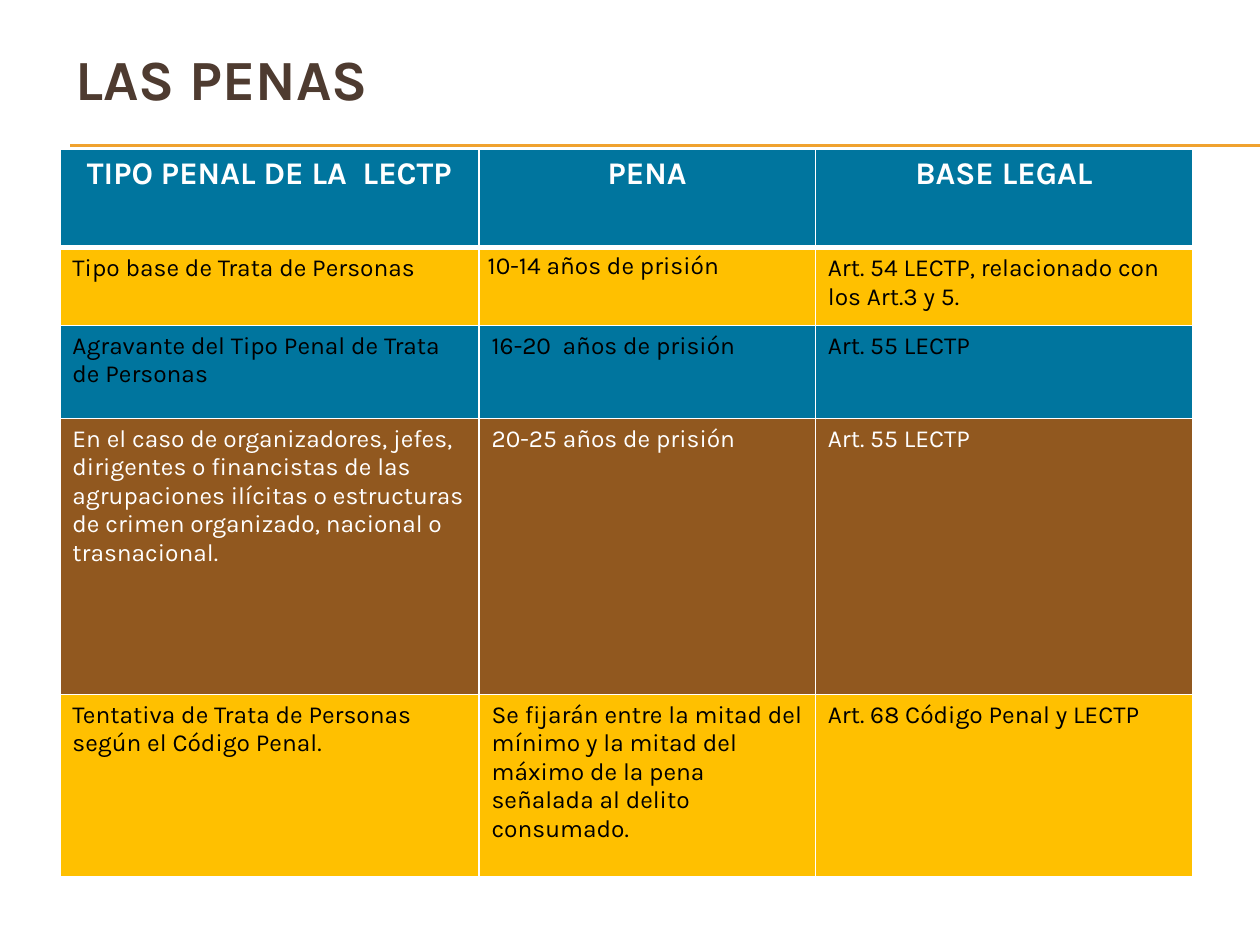
from lxml.etree import SubElement
from pptx import Presentation
from pptx.dml.color import RGBColor
from pptx.enum.shapes import MSO_CONNECTOR
from pptx.enum.text import MSO_ANCHOR, PP_ALIGN
from pptx.oxml.ns import qn
from pptx.util import Pt

WHITE = RGBColor(0xFF, 0xFF, 0xFF)
BLACK = RGBColor(0, 0, 0)
BROWN = RGBColor(0x4E, 0x3B, 0x30)
ORANGE = RGBColor(0xF0, 0xA2, 0x2E)
BLUE = RGBColor(0x00, 0x75, 0x9E)
YELLOW = RGBColor(0xFF, 0xC0, 0x00)
EARTH = RGBColor(0x91, 0x58, 0x1F)

HEADER = {"name": "Karla", "size": Pt(18), "bold": True}
BODY = {"name": "Karla", "size": Pt(14), "bold": False}
TITLE = {"name": "Karla", "size": Pt(32.4), "bold": True}


def set_font(font, values, color):
    for name, value in values.items():
        setattr(font, name, value)
    font.color.rgb = color


def add_border(cell, side, width):
    ln = SubElement(cell._tc.get_or_add_tcPr(), qn(f"a:{side}"), w=str(Pt(width)))
    fill = SubElement(ln, qn("a:solidFill"))
    SubElement(fill, qn("a:srgbClr"), val=str(WHITE))


prs = Presentation()
prs.slide_width, prs.slide_height = Pt(720), Pt(540)
s = prs.slides.add_slide(prs.slide_layouts[5])

for y in (82.8, 83.5):
    line = s.shapes.add_connector(MSO_CONNECTOR.STRAIGHT, Pt(40.3), Pt(y), Pt(720), Pt(y))
    line.line.color.rgb = ORANGE
    line.line.width = Pt(0.75)
    SubElement(line._element.spPr, qn("a:effectLst"))

title = s.shapes.title
title.left, title.top, title.width, title.height = Pt(36), Pt(21.6), Pt(648), Pt(46)
tf = title.text_frame
tf.text = "LAS PENAS"
tf.vertical_anchor = MSO_ANCHOR.MIDDLE
p = tf.paragraphs[0]
p.alignment = PP_ALIGN.LEFT
set_font(p.font, TITLE, BROWN)

rows = [
    (56.6, BLUE, WHITE, ["TIPO PENAL DE LA  LECTP", "PENA", "BASE LEGAL"]),
    (44.5, YELLOW, BLACK, [
        "Tipo base de Trata de Personas",
        "10-14 años de prisión",
        "Art. 54 LECTP, relacionado con los Art.3 y 5.",
    ]),
    (53, BLUE, BLACK, [
        "Agravante del Tipo Penal de Trata de Personas",
        "16-20  años de prisión",
        "Art. 55 LECTP",
    ]),
    (157.7, EARTH, WHITE, [
        "En el caso de organizadores, jefes, dirigentes o financistas de las "
        "agrupaciones ilícitas o estructuras de crimen organizado, nacional o "
        "trasnacional.",
        "20-25 años de prisión",
        "Art. 55 LECTP",
    ]),
    (104.4, YELLOW, BLACK, [
        "Tentativa de Trata de Personas según el Código Penal.",
        "Se fijarán entre la mitad del mínimo y la mitad del máximo de la pena "
        "señalada al delito consumado.",
        "Art. 68 Código Penal y LECTP",
    ]),
]
widths = [239.5, 192.2, 215.5]
height = sum(row[0] for row in rows)
table = s.shapes.add_table(
    len(rows), len(widths), Pt(34.2), Pt(85), Pt(sum(widths)), Pt(height)
).table
for column, width in zip(table.columns, widths):
    column.width = Pt(width)

for i, (height, fill, color, texts) in enumerate(rows):
    table.rows[i].height = Pt(height)
    for j, text in enumerate(texts):
        cell = table.cell(i, j)
        cell.text = text
        p = cell.text_frame.paragraphs[0]
        p.alignment = PP_ALIGN.LEFT if i else PP_ALIGN.CENTER
        set_font(p.runs[0].font, BODY if i else HEADER, color)
        for side, width in (("lnL", 1), ("lnR", 1), ("lnT", 3 if i == 1 else 1),
                            ("lnB", 1 if i else 3)):
            add_border(cell, side, width)
        cell.fill.solid()
        cell.fill.fore_color.rgb = fill

base_penalty = table.cell(1, 1)
base_penalty.margin_left = base_penalty.margin_right = Pt(5)
base_penalty.margin_top = base_penalty.margin_bottom = Pt(0)
base_penalty.text_frame.paragraphs[0].line_spacing = 1.15

prs.save("out.pptx")
